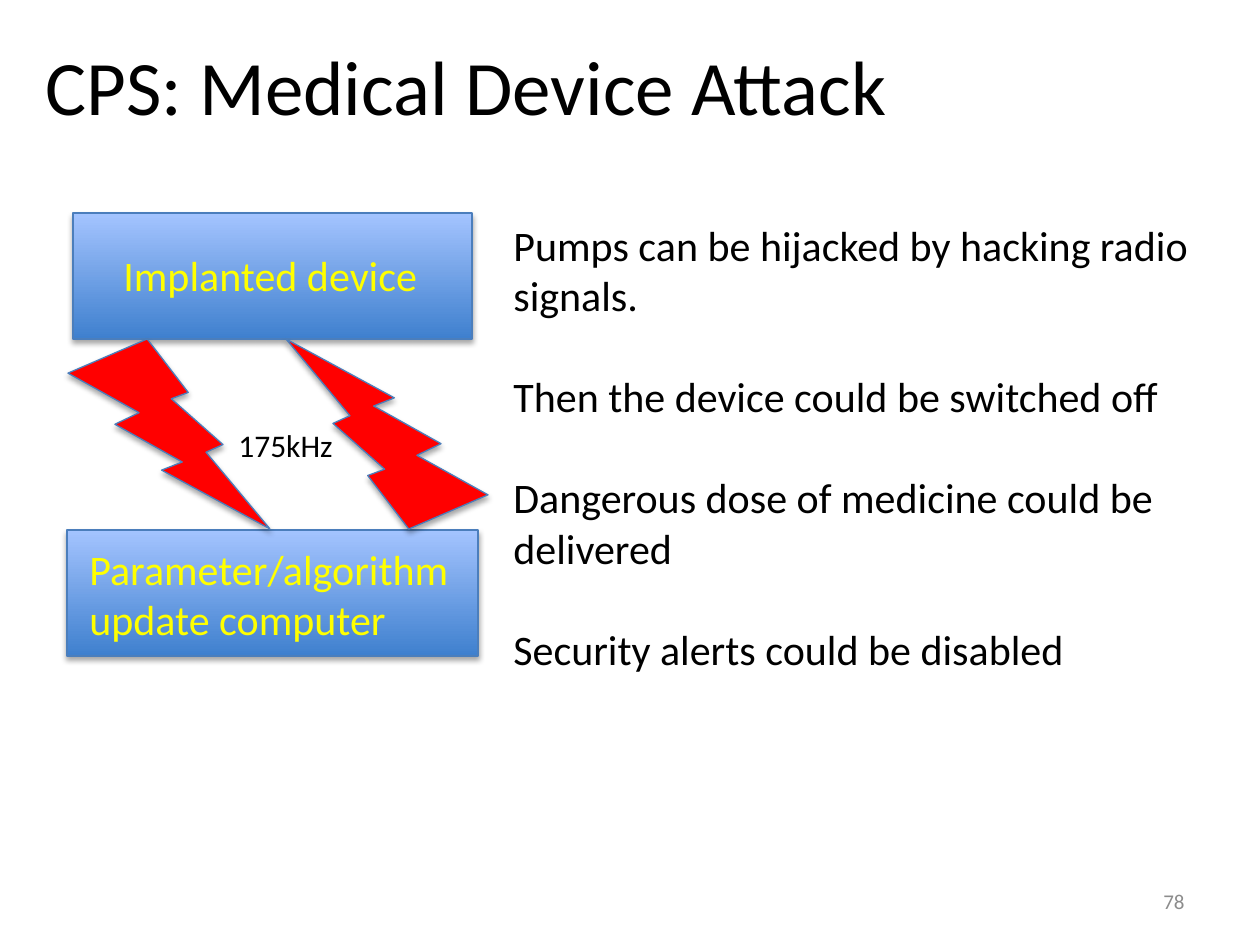
from lxml import etree
from pptx import Presentation
from pptx.dml.color import RGBColor
from pptx.enum.shapes import MSO_SHAPE as Shape
from pptx.enum.text import MSO_ANCHOR as Anchor, PP_ALIGN as Align
from pptx.oxml.ns import qn
from pptx.util import Emu, Pt

PX_PER_INCH = 126
COLORS = {
    "text": "000000",
    "label": "FFFF00",
    "number": "8C8C8C",
    "box_bottom": "3F80CE",
    "box_top": "A4C4FF",
    "outline": "4B7EBC",
    "bolt": "FF0000",
    "shadow": "000000",
}


def px(value):
    return Emu(round(value * 914400 / PX_PER_INCH))


def rgb(name):
    return RGBColor.from_string(COLORS[name])


def add_text(slide, text, box, size=24, color="text", align=Align.LEFT,
             anchor=Anchor.TOP, wrap=True, gap=0):
    """Add a text box with one paragraph per line, gap points apart."""
    frame = slide.shapes.add_textbox(*map(px, box)).text_frame
    frame.word_wrap = wrap
    frame.vertical_anchor = anchor
    frame.text = text
    for index, paragraph in enumerate(frame.paragraphs):
        paragraph.alignment = align
        if index and gap:
            paragraph.space_before = Pt(gap)
        font = paragraph.font
        font.name = "Calibri"
        font.size = Pt(size)
        font.color.rgb = rgb(color)


def add_shadow(shape):
    shape.shadow.inherit = False
    effects = shape._element.spPr.find(qn("a:effectLst"))
    shadow = etree.SubElement(
        effects, qn("a:outerShdw"), blurRad=str(Pt(3.1)), dist=str(Pt(1.8)),
        dir="5400000", rotWithShape="0")
    color = etree.SubElement(shadow, qn("a:srgbClr"), val=COLORS["shadow"])
    etree.SubElement(color, qn("a:alpha"), val="35000")


def add_outlined_shape(slide, kind, box):
    shape = slide.shapes.add_shape(kind, *map(px, box))
    shape.line.color.rgb = rgb("outline")
    shape.line.width = Pt(0.75)
    add_shadow(shape)
    return shape


def add_device(slide, box, label, label_box):
    fill = add_outlined_shape(slide, Shape.RECTANGLE, box).fill
    fill.gradient()
    fill.gradient_angle = 90
    for stop, name in zip(fill.gradient_stops, ("box_bottom", "box_top")):
        stop.color.rgb = rgb(name)
    add_text(slide, label, label_box, color="label", wrap=False)


def add_bolt(slide, left, rotation):
    bolt = add_outlined_shape(slide, Shape.LIGHTNING_BOLT,
                              (left, 339, 202, 190))
    bolt.fill.solid()
    bolt.fill.fore_color.rgb = rgb("bolt")
    bolt.rotation = rotation


def main():
    presentation = Presentation()
    presentation.slide_width = px(1260)
    presentation.slide_height = px(945)
    slide = presentation.slides.add_slide(presentation.slide_layouts[6])

    # Title and slide number
    add_text(slide, "CPS: Medical Device Attack", (33, 21, 906, 127),
             size=44, anchor=Anchor.MIDDLE)
    add_text(slide, "78", (903, 876, 294, 50), size=12, color="number",
             align=Align.RIGHT, anchor=Anchor.MIDDLE)

    # Devices and the radio link between them
    add_device(slide, (73, 213, 399, 126),
               "Implanted device", (111, 243, 323, 63))
    add_device(slide, (67, 530, 411, 126),
               "Parameter/algorithm\nupdate computer", (77, 537, 392, 115))
    add_bolt(slide, 68, 0)
    add_bolt(slide, 286, 180)
    add_text(slide, "175kHz", (226, 420, 121, 50), size=18, wrap=False)

    # Consequences of the attack
    consequences = (
        "Pumps can be hijacked by hacking radio signals.",
        "Then the device could be switched off",
        "Dangerous dose of medicine could be delivered",
        "Security alerts could be disabled",
    )
    add_text(slide, "\n".join(consequences), (501, 213, 745, 509), gap=29)

    presentation.save("out.pptx")


if __name__ == "__main__":
    main()
